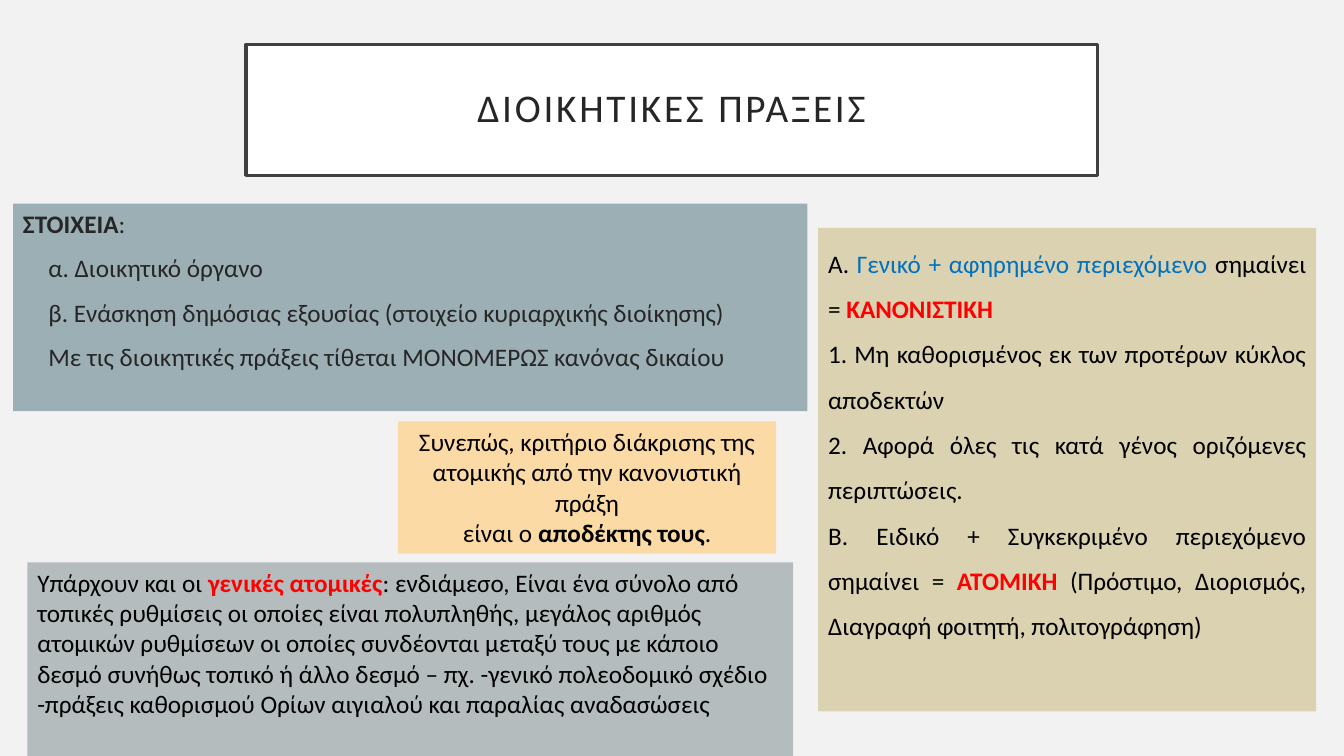
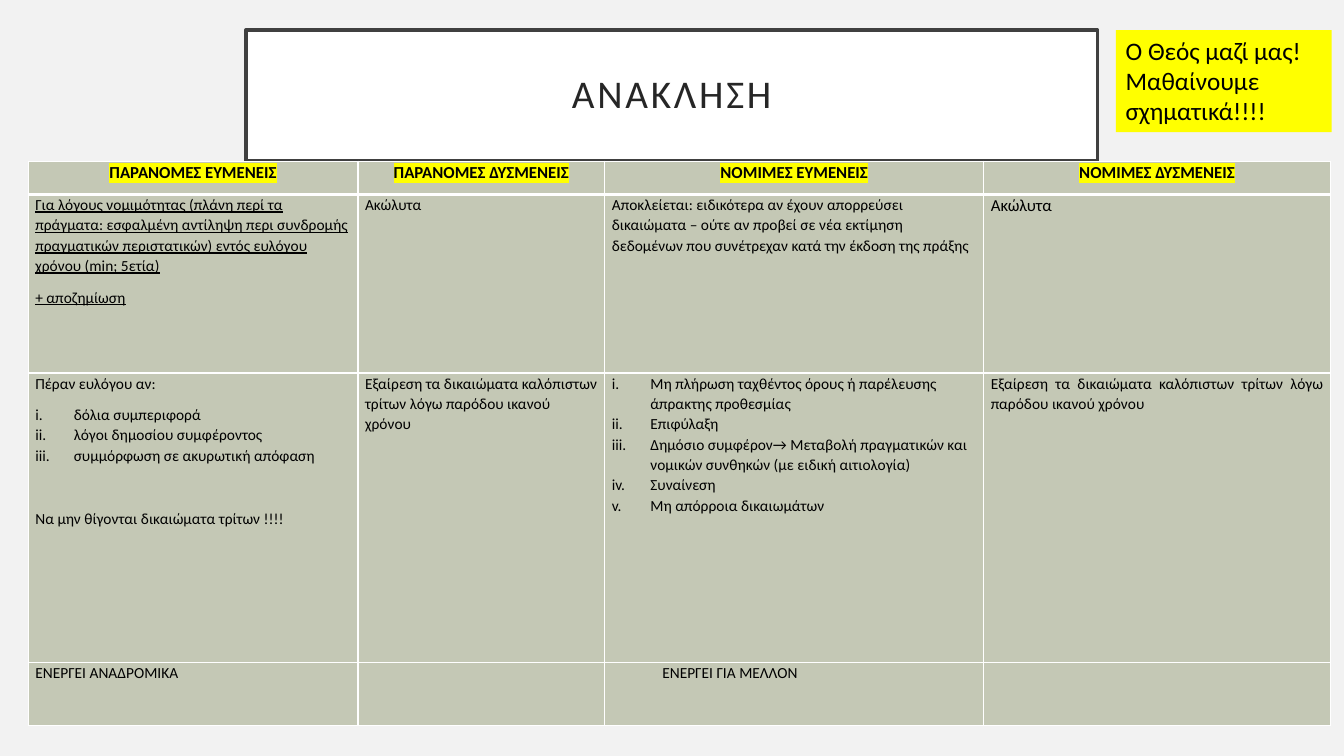
from pptx import Presentation
from pptx.dml.color import RGBColor as Rgb
from pptx.enum.shapes import MSO_SHAPE as Kind
from pptx.enum.text import MSO_ANCHOR as Anchor, PP_ALIGN as Align
from pptx.oxml.ns import qn
from pptx.util import Cm, Pt
from lxml.etree import SubElement as Sub, Element

FONT = "Calibri"
HEX = {
    "back": "F2F2F2", "white": "FFFFFF", "frame": "404040", "title": "262626",
    "black": "000000", "red": "FF0000", "blue": "0070C0", "mark": "FFFF00",
    "steel": "9BAFB5", "peach": "FBDAA5", "sand": "DAD2B0", "grey": "B4BCBE",
    "sage": "C4C8B5",
}
RED = {"color": "red", "bold": True}
BOLD = {"bold": True}


def write(frame, paras, size, color="black", **base):
    """Fill a frame with paragraphs: (runs, settings), a run being text or (text, style).

    The settings in base hold for every paragraph that does not set its own.
    """
    for num, (runs, own) in enumerate(paras):
        look = {**base, **own}
        para = frame.paragraphs[0] if num == 0 else frame.add_paragraph()
        para.alignment = look.get("align", Align.LEFT)
        para.line_spacing = look.get("lines", 1.0)
        para.space_before = Pt(look.get("before", 0))
        para.space_after = Pt(look.get("after", 0))
        props = para._p.get_or_add_pPr()
        props.set("marL", str(Cm(look.get("left", 0))))
        if look.get("roman"):
            props.set("indent", str(-Cm(look["left"])))
            Sub(props, qn("a:buAutoNum"), type="romanLcPeriod")
        for part in runs:
            text, style = (part, {}) if isinstance(part, str) else part
            style = {**look, **style}
            run = para.add_run()
            run.text = text
            font = run.font
            font.name = FONT
            font.size = Pt(style.get("size", size))
            font.bold = style.get("bold", False)
            font.underline = style.get("under", False)
            font.color.rgb = Rgb.from_string(HEX[style.get("color", color)])
            code = run._r.get_or_add_rPr()
            if "track" in style:
                code.set("spc", str(style["track"] * 100))
            if "mark" in style:
                mark = Element(qn("a:highlight"))
                Sub(mark, qn("a:srgbClr"), val=HEX[style["mark"]])
                code.find(qn("a:solidFill")).addnext(mark)


def box(slide, area, fill, line=None):
    """Add a filled rectangle, its area in centimetres, and return it."""
    shape = slide.shapes.add_shape(Kind.RECTANGLE, *map(Cm, area))
    shape.shadow.inherit = False
    shape.fill.solid()
    shape.fill.fore_color.rgb = Rgb.from_string(HEX[fill])
    if line:
        shape.line.color.rgb = Rgb.from_string(HEX[line])
        shape.line.width = Pt(2.5)
    else:
        shape.line.fill.background()
    shape.text_frame.word_wrap = True
    shape.text_frame.vertical_anchor = Anchor.TOP
    return shape


deck = Presentation()
deck.slide_width, deck.slide_height = Cm(33.87), Cm(19.05)
ground = deck.slide_master.background.fill
ground.solid()
ground.fore_color.rgb = Rgb.from_string(HEX["back"])

# Slides and their titles
slides = []
for title, top in (("ΔΙΟΙΚΗΤΙΚΕΣ ΠΡΑΞΕΙΣ", 1.12), ("ΑΝΑΚΛΗΣΗ", 0.76)):
    slide = deck.slides.add_slide(deck.slide_layouts[6])
    frame = box(slide, (6.2, top, 21.46, 3.3), "white", "frame").text_frame
    frame.vertical_anchor = Anchor.MIDDLE
    frame.margin_left = frame.margin_right = Cm(0.51)
    frame.margin_top = frame.margin_bottom = Cm(0.51)
    write(frame, [([title], {})], 28, "title",
          align=Align.CENTER, lines=0.9, track=2)
    slides.append(slide)
acts, recall = slides

# Slide 1: text panels
item = {"left": 0.64}
panels = [
    ((0.33, 5.13, 20.02, 5.23), "steel", "title",
     {"align": Align.JUSTIFY, "before": 10}, [
        ([("ΣΤΟΙΧΕΙΑ", BOLD), ":"], {}),
        (["α. Διοικητικό όργανο"], item),
        (["β. Ενάσκηση δημόσιας εξουσίας (στοιχείο κυριαρχικής διοίκησης)"], item),
        (["Με τις διοικητικές πράξεις τίθεται ΜΟΝΟΜΕΡΩΣ κανόνας δικαίου"], item),
    ]),
    ((10.03, 10.62, 9.53, 3.33), "peach", "black", {"align": Align.CENTER}, [
        (["Συνεπώς, κριτήριο διάκρισης της ατομικής από την κανονιστική πράξη"], {}),
        (["είναι ο ", ("αποδέκτης τους", BOLD), "."], {}),
    ]),
    ((20.62, 5.74, 12.55, 12.19), "sand", "black",
     {"align": Align.JUSTIFY, "lines": 1.5}, [
        (["Α. ", ("Γενικό + αφηρημένο περιεχόμενο ", {"color": "blue"}),
          "σημαίνει = ", ("ΚΑΝΟΝΙΣΤΙΚΗ", RED)], {}),
        (["1. Μη καθορισμένος εκ των προτέρων κύκλος αποδεκτών"], {}),
        (["2. Αφορά όλες τις κατά γένος οριζόμενες περιπτώσεις."], {}),
        (["Β. Ειδικό + Συγκεκριμένο περιεχόμενο σημαίνει = ", ("ΑΤΟΜΙΚΗ ", RED),
          "(Πρόστιμο, Διορισμός, Διαγραφή φοιτητή, πολιτογράφηση)"], {}),
    ]),
    ((0.69, 14.17, 19.3, 4.88), "grey", "black", {}, [
        (["Υπάρχουν και οι ", ("γενικές ατομικές", RED),
          ": ενδιάμεσο, Είναι ένα σύνολο από τοπικές ρυθμίσεις οι οποίες είναι "
          "πολυπληθής, μεγάλος αριθμός ατομικών ρυθμίσεων οι οποίες συνδέονται "
          "μεταξύ τους με κάποιο δεσμό συνήθως τοπικό ή άλλο δεσμό – πχ. -γενικό "
          "πολεοδομικό σχέδιο -πράξεις καθορισμού Ορίων αιγιαλού και παραλίας "
          "αναδασώσεις"], {}),
    ]),
]
for area, fill, color, base, paras in panels:
    write(box(acts, area, fill).text_frame, paras, 18, color, **base)

# Slide 2: table
head = {"align": Align.CENTER, "size": 12, "bold": True, "mark": "mark"}
under = {"under": True}
just = {"align": Align.JUSTIFY}
step = {"left": 0.97, "roman": True, "after": 0}
last = {**step, "after": 8}
third = "Εξαίρεση τα δικαιώματα καλόπιστων τρίτων λόγω παρόδου ικανού χρόνου"
heads = ("ΠΑΡΑΝΟΜΕΣ ΕΥΜΕΝΕΙΣ", "ΠΑΡΑΝΟΜΕΣ ΔΥΣΜΕΝΕΙΣ",
         "ΝΟΜΙΜΕΣ ΕΥΜΕΝΕΙΣ", "ΝΟΜΙΜΕΣ ΔΥΣΜΕΝΕΙΣ")
rows = [
    [[([text], head)] for text in heads],
    [
        [(["Για λόγους νομιμότητας (πλάνη περί τα πράγματα: εσφαλμένη αντίληψη "
           "περι συνδρομής πραγματικών περιστατικών) εντός ευλόγου χρόνου "
           "(min; 5ετία)"], under),
         (["+ αποζημίωση"], under)],
        [(["Ακώλυτα"], {})],
        [(["Αποκλείεται: ειδικότερα αν έχουν απορρεύσει δικαιώματα – ούτε αν "
           "προβεί σε νέα εκτίμηση δεδομένων που συνέτρεχαν κατά την έκδοση "
           "της πράξης"], {})],
        [(["Ακώλυτα"], {**just, "size": 12})],
    ],
    [
        [(["Πέραν ευλόγου αν:"], {}),
         (["δόλια συμπεριφορά"], step),
         (["λόγοι δημοσίου συμφέροντος"], step),
         (["συμμόρφωση σε ακυρωτική απόφαση"], last),
         (["Να μην θίγονται δικαιώματα τρίτων !!!!"], {"before": 22.4})],
        [([third], {})],
        [(["Μη πλήρωση ταχθέντος όρους ή παρέλευσης άπρακτης προθεσμίας"], step),
         (["Επιφύλαξη"], step),
         (["Δημόσιο συμφέρον→ Μεταβολή πραγματικών και νομικών συνθηκών "
           "(με ειδική αιτιολογία)"], step),
         (["Συναίνεση"], step),
         (["Μη απόρροια δικαιωμάτων"], last)],
        [([third], just)],
    ],
    [
        [(["ΕΝΕΡΓΕΙ ΑΝΑΔΡΟΜΙΚΑ"], {})],
        [],
        [(["ΕΝΕΡΓΕΙ ΓΙΑ ΜΕΛΛΟΝ"], {"left": 1.27})],
        [],
    ],
]
wides = (8.31, 6.22, 9.55, 8.74)
highs = (0.84, 4.5, 7.29, 1.6)
grid = recall.shapes.add_table(
    len(highs), len(wides), Cm(0.71), Cm(4.06), Cm(sum(wides)), Cm(sum(highs))).table
grid.horz_banding = False
for col, wide in zip(grid.columns, wides):
    col.width = Cm(wide)
for row, high in zip(grid.rows, highs):
    row.height = Cm(high)

for y, row in enumerate(rows):
    for x, paras in enumerate(row):
        cell = grid.cell(y, x)
        cell.margin_left = cell.margin_right = Cm(0.18)
        cell.margin_top = cell.margin_bottom = 0
        cell.fill.solid()
        cell.fill.fore_color.rgb = Rgb.from_string(HEX["sage"])
        write(cell.text_frame, paras, 11, lines=1.07, after=8)
        props = cell._tc.get_or_add_tcPr()
        for spot, side in enumerate("LRTB"):
            thick = 3 if (y, side) in ((0, "B"), (1, "T")) else 1
            edge = Element(qn("a:ln" + side), w=str(Pt(thick)))
            Sub(Sub(edge, qn("a:solidFill")), qn("a:srgbClr"), val=HEX["white"])
            props.insert(spot, edge)

# Slide 2: note
note = box(recall, (28.12, 0.76, 5.44, 2.57), "mark")
write(note.text_frame, [(["Ο Θεός μαζί μας! Μαθαίνουμε σχηματικά!!!!"], {})], 18)

deck.save("out.pptx")
